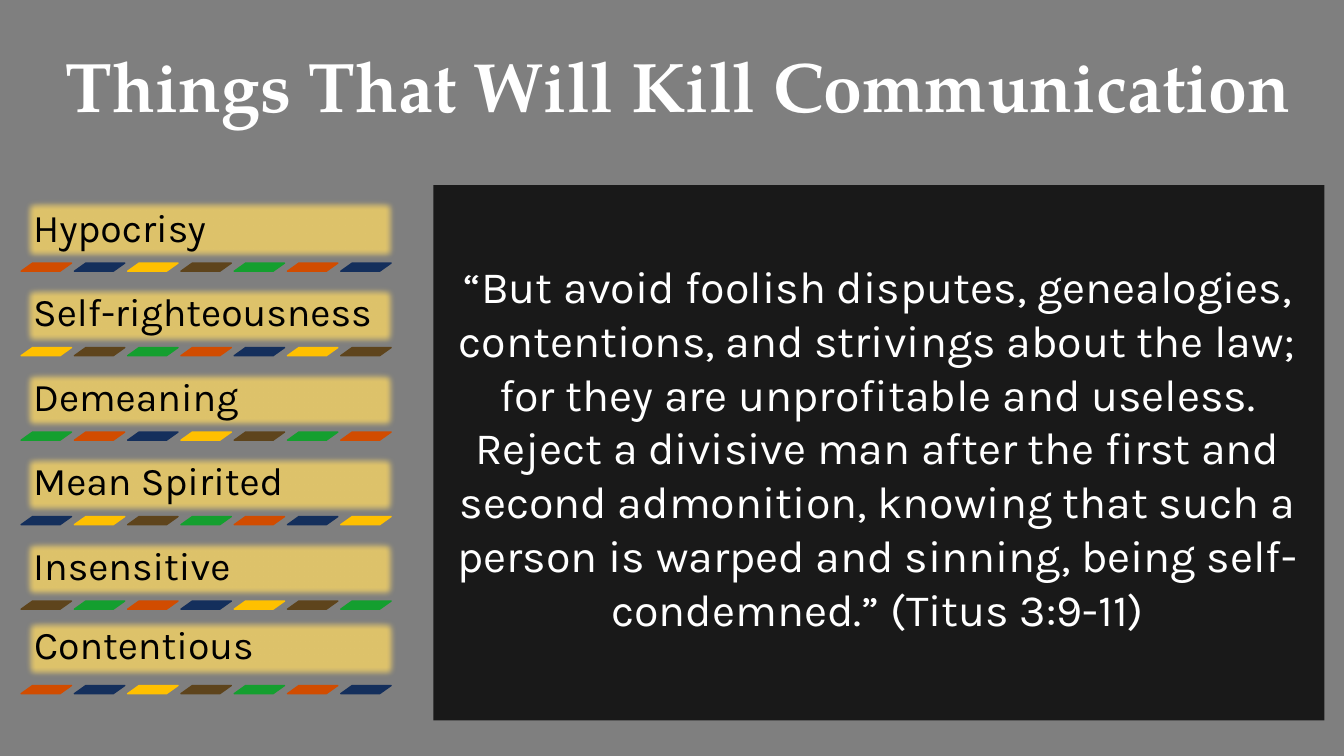
import lxml.etree
import pptx
import pptx.dml.color
import pptx.enum.shapes
import pptx.enum.text
import pptx.oxml.ns
import pptx.util

Pt = pptx.util.Pt
SHAPES = pptx.enum.shapes.MSO_SHAPE
ALIGN = pptx.enum.text.PP_ALIGN
ANCHOR = pptx.enum.text.MSO_ANCHOR
WIDTH, HEIGHT = 960, 540

HABITS = ["Hypocrisy", "Self-righteousness", "Demeaning",
          "Mean Spirited", "Insensitive", "Contentious"]
VERSE = ("“But avoid foolish disputes, genealogies, contentions, and strivings "
         "about the law; for they are unprofitable and useless. Reject a divisive "
         "man after the first and second admonition, knowing that such a person is "
         "warped and sinning, being self-condemned.” (Titus 3:9-11)")


def color(hex_code):
    return pptx.dml.color.RGBColor.from_string(hex_code)


def add_child(parent, tag, **attributes):
    return lxml.etree.SubElement(parent, pptx.oxml.ns.qn(tag), attributes)


class Deck:
    BODY_FONT = "Karla"
    TITLE_FONT = "TeX Gyre Pagella"
    BLACK, WHITE, GOLD = "000000", "FFFFFF", "FFD966"
    STRIPES = ["D14C00", "142F5C", "FFC000", "5E441C", "149F2F"]

    def __init__(self):
        self.presentation = pptx.Presentation()
        self.presentation.slide_width = Pt(WIDTH)
        self.presentation.slide_height = Pt(HEIGHT)
        self.slide = self.presentation.slides.add_slide(
            self.presentation.slide_layouts[6])
        background = self.slide.background.fill
        background.solid()
        background.fore_color.rgb = color(self.WHITE)

    def shape(self, preset, left, top, width, height, fill):
        item = self.slide.shapes.add_shape(
            preset, Pt(left), Pt(top), Pt(width), Pt(height))
        item.shadow.inherit = False
        item.fill.solid()
        item.fill.fore_color.rgb = color(fill)
        item.line.fill.background()
        return item

    def panel(self, left, top, width, height, fill, opacity, soft_edge=0):
        """Add a translucent rectangle; opacity is in percent, soft_edge in points."""
        panel = self.shape(SHAPES.RECTANGLE, left, top, width, height, fill)
        properties = panel._element.spPr
        fill_color = properties.find(".//" + pptx.oxml.ns.qn("a:srgbClr"))
        add_child(fill_color, "a:alpha", val=str(opacity * 1000))
        if soft_edge:
            effects = properties.find(pptx.oxml.ns.qn("a:effectLst"))
            add_child(effects, "a:softEdge", rad=str(Pt(soft_edge)))

    def text(self, text, left, top, width, height, size, fill, font=BODY_FONT,
             bold=False, align=ALIGN.LEFT, anchor=ANCHOR.TOP,
             insets=(0, 0, 0, 0), line_spacing=1.0):
        """Add a wrapped text box; insets run left, top, right, bottom."""
        frame = self.slide.shapes.add_textbox(
            Pt(left), Pt(top), Pt(width), Pt(height)).text_frame
        frame.word_wrap = True
        frame.vertical_anchor = anchor
        (frame.margin_left, frame.margin_top,
         frame.margin_right, frame.margin_bottom) = map(Pt, insets)
        paragraph = frame.paragraphs[0]
        paragraph.alignment = align
        paragraph.line_spacing = line_spacing
        run = paragraph.add_run()
        run.text = text
        run.font.name = font
        run.font.size = Pt(size)
        run.font.bold = bold
        run.font.color.rgb = color(fill)

    def label(self, text, left, top, height):
        box = (left, top, 269.3, height)
        self.panel(*box, self.GOLD, 75, soft_edge=5)
        self.text(text, *box, 28, self.BLACK, anchor=ANCHOR.BOTTOM,
                  insets=(8.64,) * 4, line_spacing=0.9)

    def stripe_row(self, left, top, first_color):
        for column in range(7):
            fill = self.STRIPES[(first_color + column) % len(self.STRIPES)]
            stripe = self.shape(SHAPES.PARALLELOGRAM, left + 38.05 * column, top,
                                36, 5.8, fill)
            stripe.adjustments[0] = 1.408
            stripe.line.color.rgb = color(fill)
            stripe.line.width = Pt(1)


def main():
    deck = Deck()
    deck.panel(0, 0, WIDTH, HEIGHT, deck.BLACK, 50)
    deck.panel(309.6, 132.2, 636.5, 382.3, deck.BLACK, 80)
    deck.text("Things That Will Kill Communication", 27.4, 18.7, 914.4, 72.7,
              50, deck.WHITE, font=deck.TITLE_FONT, bold=True,
              align=ALIGN.CENTER, anchor=ANCHOR.BOTTOM, line_spacing=0.9)
    deck.text(VERSE, 313.2, 133.2, 627.8, 377.3, 32, deck.WHITE,
              align=ALIGN.CENTER, insets=(7.2, 51.6, 7.2, 3.6))

    left = 15.1
    last = len(HABITS) - 1
    for row, habit in enumerate(HABITS):
        stripe_top = 187.9 + 60.35 * row
        height = 47.5 if row == 0 else 45.4
        rise, shift = (3.6, 0.7) if row == last else (0, 0)
        deck.label(habit, left + shift, stripe_top - height - rise, height)
        deck.stripe_row(left, stripe_top, first_color=2 * row)
    deck.presentation.save("out.pptx")


if __name__ == "__main__":
    main()
